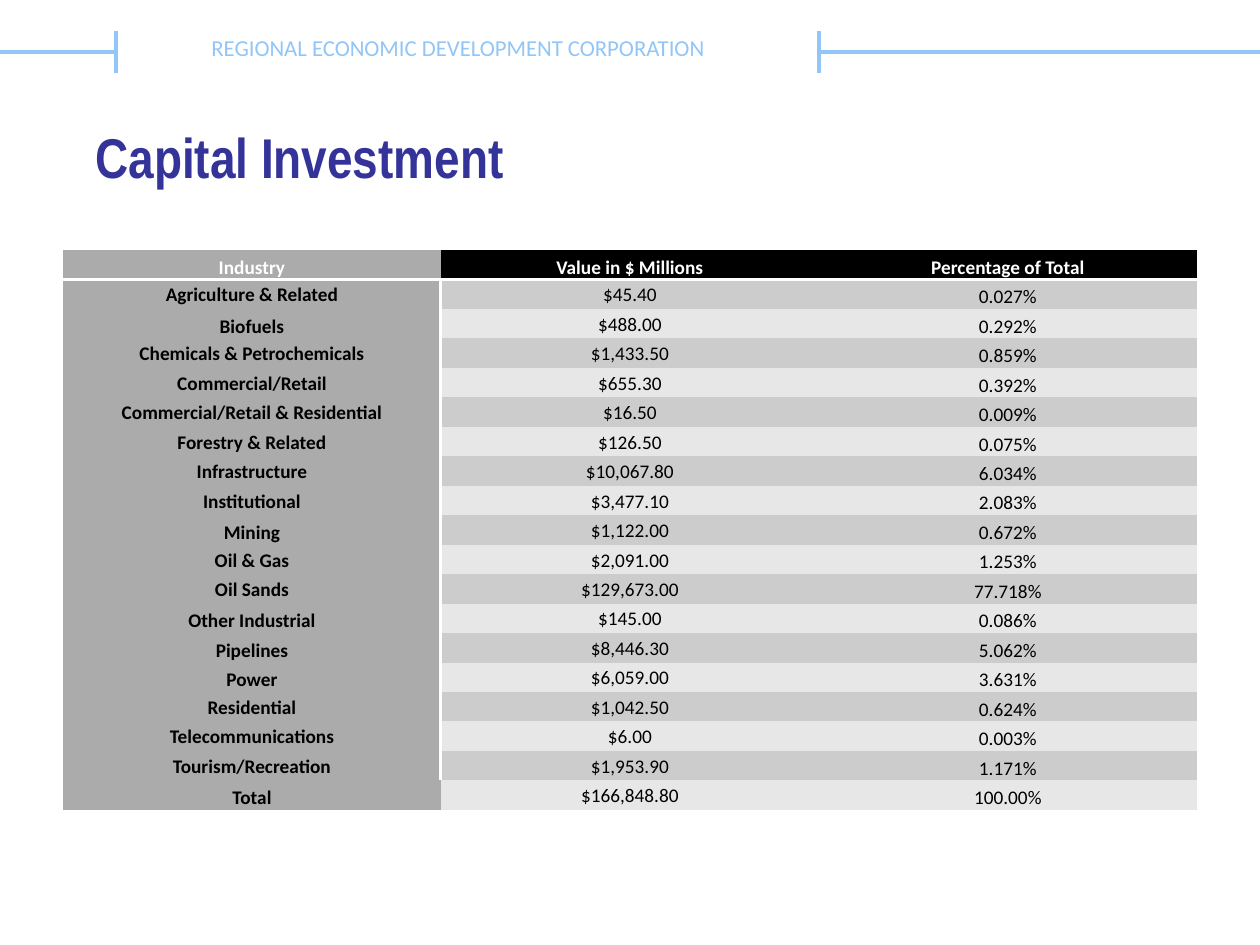
from lxml.etree import SubElement
from pptx import Presentation
from pptx.dml.color import RGBColor
from pptx.enum.shapes import MSO_CONNECTOR
from pptx.enum.text import MSO_ANCHOR, PP_ALIGN
from pptx.oxml.ns import qn
from pptx.util import Emu, Pt

SCALE = 914400 // 126
SKY, WHITE, BLACK = "91C6F7", "FFFFFF", "000000"
GREY, BANDS = "ABABAB", ("CCCCCC", "E7E7E7")
NO_STYLE = "{2D5ABB26-0587-4C30-8999-92F81FD0307C}"
TALL, SHORT = Pt(16.8), Pt(14.7)

HEADINGS = ("Industry", "Value in $ Millions", "Percentage of Total")
INVESTMENTS = (
    ("Agriculture & Related", "$45.40", "0.027%"),
    ("Biofuels", "$488.00", "0.292%"),
    ("Chemicals & Petrochemicals", "$1,433.50", "0.859%"),
    ("Commercial/Retail", "$655.30", "0.392%"),
    ("Commercial/Retail & Residential", "$16.50", "0.009%"),
    ("Forestry & Related", "$126.50", "0.075%"),
    ("Infrastructure", "$10,067.80", "6.034%"),
    ("Institutional", "$3,477.10", "2.083%"),
    ("Mining", "$1,122.00", "0.672%"),
    ("Oil & Gas", "$2,091.00", "1.253%"),
    ("Oil Sands", "$129,673.00", "77.718%"),
    ("Other Industrial", "$145.00", "0.086%"),
    ("Pipelines", "$8,446.30", "5.062%"),
    ("Power", "$6,059.00", "3.631%"),
    ("Residential", "$1,042.50", "0.624%"),
    ("Telecommunications", "$6.00", "0.003%"),
    ("Tourism/Recreation", "$1,953.90", "1.171%"),
    ("Total", "$166,848.80", "100.00%"),
)
TALL_LABELS = {"Biofuels", "Mining", "Other Industrial", "Pipelines", "Power", "Total"}

HEADER_FONT = {"name": "Calibri", "size": Pt(13)}
TITLE_FONT = {"name": "Arial Narrow", "size": Pt(32), "bold": True}
CELL_FONT = {"name": "Calibri", "size": Pt(11)}
CELL_FORMAT = {
    "vertical_anchor": MSO_ANCHOR.MIDDLE,
    "margin_left": Emu(9 * SCALE),
    "margin_right": Emu(9 * SCALE),
    "margin_top": 0,
    "margin_bottom": 0,
}


def px(*lengths):
    return [Emu(n * SCALE) for n in lengths]


def rgb(value):
    return RGBColor.from_string(value)


def apply(obj, values):
    for name, value in values.items():
        setattr(obj, name, value)


def write(p, text, font, color):
    r = p.add_run()
    r.text = text
    apply(r.font, font)
    r.font.color.rgb = rgb(color)


def add_rule(s, *ends):
    sp = s.shapes.add_connector(MSO_CONNECTOR.STRAIGHT, *px(*ends))
    sp.line.color.rgb = rgb(SKY)
    sp.line.width = Pt(2)
    SubElement(sp._element.spPr, qn("a:effectLst"))


def add_text(s, box, text, font, color, anchor):
    tf = s.shapes.add_textbox(*px(*box)).text_frame
    apply(tf, {"word_wrap": True, "vertical_anchor": anchor})
    write(tf.paragraphs[0], text, font, color)


def add_border(cell, side):
    ln = SubElement(cell._tc.get_or_add_tcPr(), qn(f"a:{side}"), w=str(Pt(2)))
    fill = SubElement(ln, qn("a:solidFill"))
    SubElement(fill, qn("a:srgbClr"), val=WHITE)


def fill_cell(cell, text, fill, color, bold, spacing, border=None):
    apply(cell, CELL_FORMAT)
    if border:
        add_border(cell, border)
    cell.fill.solid()
    cell.fill.fore_color.rgb = rgb(fill)
    p = cell.text_frame.paragraphs[0]
    apply(p, {"alignment": PP_ALIGN.CENTER, "line_spacing": spacing})
    write(p, text, {**CELL_FONT, "bold": bold}, color)


def add_investment_table(s):
    rows, cols = len(INVESTMENTS) + 1, len(HEADINGS)
    table = s.shapes.add_table(rows, cols, *px(63, 250, 1134, 508)).table
    apply(table, {"first_row": False, "horz_banding": False})
    table._tbl.tblPr.find(qn("a:tableStyleId")).text = NO_STYLE
    for col, heading in enumerate(HEADINGS):
        fill = BLACK if col else GREY
        fill_cell(table.cell(0, col), heading, fill, WHITE, True, TALL, "lnB")
    for row, (industry, value, share) in enumerate(INVESTMENTS, 1):
        band = BANDS[(row - 1) % 2]
        spacing = TALL if industry in TALL_LABELS else SHORT
        border = "lnR" if row < rows - 1 else None
        fill_cell(table.cell(row, 0), industry, GREY, BLACK, True, spacing, border)
        fill_cell(table.cell(row, 1), value, band, BLACK, False, SHORT)
        fill_cell(table.cell(row, 2), share, band, BLACK, False, TALL)


def main():
    prs = Presentation()
    prs.slide_width, prs.slide_height = px(1260, 945)
    s = prs.slides.add_slide(prs.slide_layouts[6])
    add_rule(s, 819, 52, 1260, 52)
    add_text(s, (199, 21, 557, 53), "REGIONAL ECONOMIC DEVELOPMENT CORPORATION",
             HEADER_FONT, SKY, MSO_ANCHOR.MIDDLE)
    add_rule(s, 0, 52, 116, 52)
    for x in (819, 116):
        add_rule(s, x, 73, x, 31)
    add_investment_table(s)
    add_text(s, (83, 116, 459, 81), "Capital Investment",
             TITLE_FONT, "333399", MSO_ANCHOR.TOP)
    prs.save("out.pptx")


if __name__ == "__main__":
    main()
